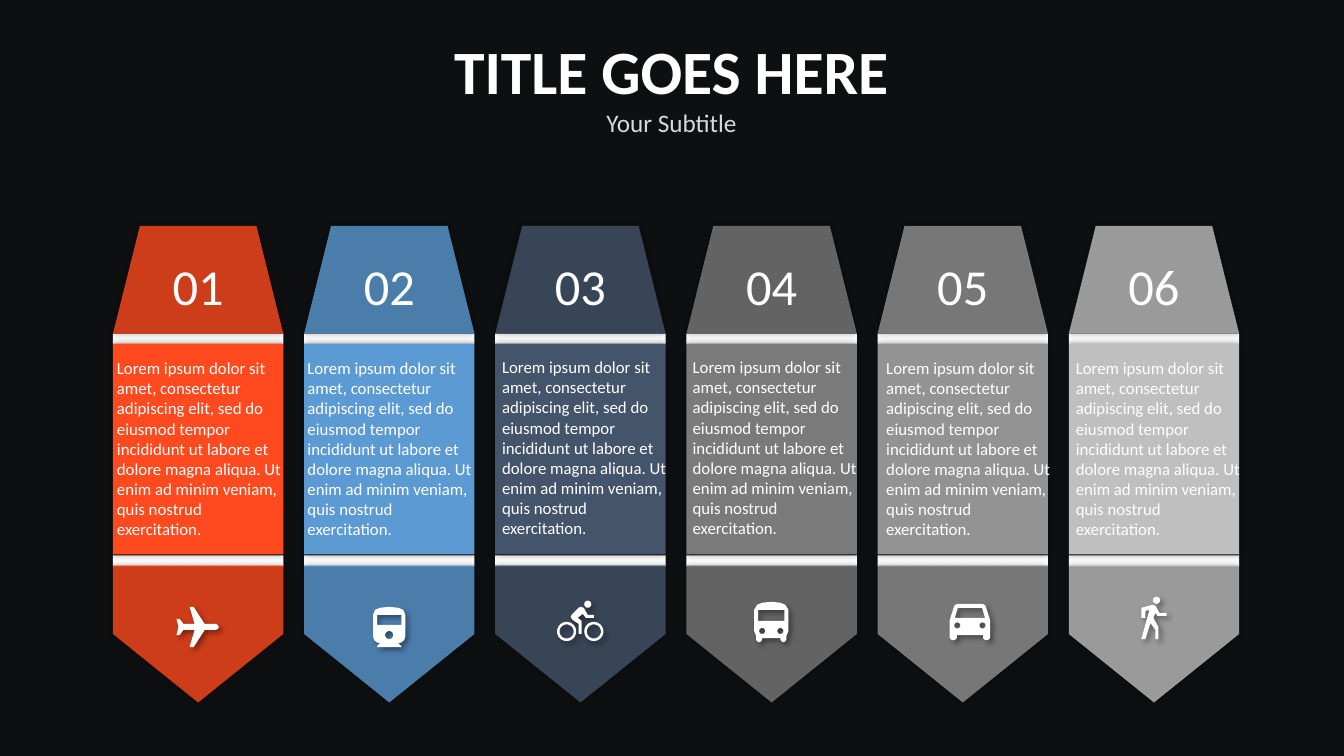
"""Build a slide with six numbered travel banners."""
from dataclasses import dataclass
from math import cos, pi, sin

from lxml import etree
from pptx import Presentation
from pptx import util as u
from pptx.dml.color import RGBColor
from pptx.enum import shapes, text
from pptx.oxml.ns import qn
from pptx.shapes.autoshape import Shape
from pptx.shapes.shapetree import GroupShapes, SlideShapes
from pptx.slide import Slide
from pptx.text.text import _Paragraph

Outline = list[tuple[float, float]]

COLORS = {
    "night": "0E0F11", "white": "FFFFFF", "subtitle": "D9D9D9", "shadow": "000000",
    "orange": "FE4A1E", "blue": "5C9AD3", "navy": "44546B",
    "dark gray": "7A7A7A", "gray": "939393", "light gray": "BFBFBF",
}
FONT = "Calibri"
LOREM = ("Lorem ipsum dolor sit amet, consectetur adipiscing elit, sed do eiusmod "
         "tempor incididunt ut labore et dolore magna aliqua. Ut enim ad minim veniam, "
         "quis nostrud exercitation.")
FIRST_LEFT, LAST_LEFT, BANNER_WIDTH = 1.12, 10.6, 1.69
STRIP_HEIGHT = 0.11
CAP_TOP, CAP_HEIGHT = 2.24, 1.07
PANEL_TOP, PANEL_HEIGHT = 3.41, 2.09
POINT_CENTER, POINT_LENGTH = 6.29, 1.36


@dataclass(frozen=True)
class Shadow:
    blur: float
    distance: float
    angle: int


@dataclass(frozen=True)
class Icon:
    center_x: float
    center_y: float
    outlines: list[Outline]


@dataclass(frozen=True)
class Banner:
    number: str
    color: str
    body_left: float
    body_top: float
    icon: Icon


GLOW = Shadow(5, 0, 0)
DROP = Shadow(4, 3, 45)


def circle(x: float, y: float, radius: float) -> Outline:
    """Return a circle as 32 points."""
    return [(x + radius * cos(k * pi / 16), y + radius * sin(k * pi / 16)) for k in range(32)]


def mirror_x(half: Outline) -> Outline:
    """Complete a right half with its left half."""
    return half + [(-x, y) for x, y in reversed(half)]


def mirror_y(half: Outline) -> Outline:
    """Complete an upper half with its lower half."""
    return half + [(x, -y) for x, y in reversed(half)]


PLANE = Icon(1.96, 6.22, [mirror_y([
    (21, 0), (20, -2), (18, -3), (7, -3), (-4, -20), (-8, -20), (-3, -3),
    (-14, -3), (-18, -8), (-21, -8), (-19, 0)])])
TRAIN = Icon(3.86, 6.22, [
    mirror_x([(0, -20), (9, -19), (14, -17), (16, -12), (16, 9), (15, 13), (12, 15.5),
              (9, 16), (12, 19), (12, 20)]),
    mirror_x([(12, -12), (12, -2)]), circle(0, 8, 4)])
BICYCLE = Icon(5.75, 6.16, [
    circle(8, -16.5, 3.5),
    *(circle(x, 10.5, radius) for x in (-13, 14) for radius in (9.5, 7)),
    [(6, -3), (14, -3), (14, -6), (8, -6), (4, -13), (1, -14), (-1, -13), (-8, -6),
     (-9, -4), (-7, -1), (-1, 3), (-1, 13), (2, 13), (2, 0), (-2, -3), (3, -7)]])
BUS = Icon(7.65, 6.17, [
    mirror_x([(0, -20), (9, -19), (14, -17), (17, -12), (17, 9), (15, 14), (15, 18),
              (13, 20), (11, 20), (9, 18), (9, 16)]),
    mirror_x([(13, -12), (13, -1)]), circle(-9, 9, 3), circle(9, 9, 3)])
CAR = Icon(9.62, 6.17, [
    mirror_x([(12, -18), (14.5, -17), (15.5, -16), (20, -2), (20, 16), (18, 18),
              (15, 18), (13, 16), (13, 13)]),
    mirror_x([(12, -14), (15, -4)]), circle(-12.5, 3.5, 3), circle(12.5, 3.5, 3)])
WALKER = Icon(11.44, 6.13, [
    circle(3, -17.5, 3.5),
    [(4, -2), (13, -2), (13, -5), (6, -5), (2, -12), (-1, -13), (-12, -10), (-12, 0),
     (-8, 0), (-8, -7), (-4, -8), (-12, 21), (-8, 21), (-3, 5), (2, 12), (2, 21),
     (5, 21), (5, 9), (0, 0), (2, -5)]])

BANNERS = [
    Banner("01", "orange", 1.09, 3.52, PLANE),
    Banner("02", "blue", 2.98, 3.52, TRAIN),
    Banner("03", "navy", 4.91, 3.51, BICYCLE),
    Banner("04", "dark gray", 6.8, 3.51, BUS),
    Banner("05", "gray", 8.72, 3.52, CAR),
    Banner("06", "light gray", 10.6, 3.52, WALKER),
]
PITCH = (LAST_LEFT - FIRST_LEFT) / (len(BANNERS) - 1)


def paint(part: Shape, color: str, opacity: int = 100, shadow: Shadow | None = None) -> None:
    """Fill a part without outline and set its shadow."""
    part.fill.solid()
    part.fill.fore_color.rgb = RGBColor.from_string(COLORS[color])
    part.line.fill.background()
    part.shadow.inherit = False
    properties = part._element.spPr
    if opacity < 100:
        tint = properties.find(qn("a:solidFill"))[0]
        etree.SubElement(tint, qn("a:alpha"), val=str(opacity * 1000))
    if shadow:
        outer = etree.SubElement(
            properties.find(qn("a:effectLst")), qn("a:outerShdw"),
            blurRad=str(u.Pt(shadow.blur)), dist=str(u.Pt(shadow.distance)),
            dir=str(shadow.angle * 60000), algn="ctr", rotWithShape="0")
        shade = etree.SubElement(outer, qn("a:srgbClr"), val=COLORS["shadow"])
        etree.SubElement(shade, qn("a:alpha"), val="40000")


def add_part(tree: SlideShapes | GroupShapes, kind: shapes.MSO_SHAPE, left: float,
             top: float, width: float, height: float) -> Shape:
    """Add a preset shape placed in inches."""
    return tree.add_shape(kind, u.Inches(left), u.Inches(top), u.Inches(width), u.Inches(height))


def write(paragraph: _Paragraph, words: str, size: int, color: str = "white",
          bold: bool = False) -> None:
    """Add one formatted run."""
    run = paragraph.add_run()
    run.text = words
    run.font.name, run.font.size, run.font.bold = FONT, u.Pt(size), bold
    run.font.color.rgb = RGBColor.from_string(COLORS[color])


def add_strip(tree: GroupShapes, left: float, top: float) -> None:
    """Add the white strip next to a panel."""
    paint(add_part(tree, shapes.MSO_SHAPE.RECTANGLE, left, top, BANNER_WIDTH, STRIP_HEIGHT), "white")


def add_cap(slide: Slide, banner: Banner, left: float) -> None:
    """Add the numbered top of a banner."""
    tree = slide.shapes.add_group_shape().shapes
    add_strip(tree, left, CAP_TOP + CAP_HEIGHT)
    cap = add_part(tree, shapes.MSO_SHAPE.TRAPEZOID, left, CAP_TOP, BANNER_WIDTH, CAP_HEIGHT)
    paint(cap, banner.color, 80, GLOW)
    cap.text_frame.vertical_anchor = text.MSO_ANCHOR.MIDDLE
    label = cap.text_frame.paragraphs[0]
    label.alignment = text.PP_ALIGN.CENTER
    write(label, banner.number, 36)


def add_point(slide: Slide, banner: Banner, left: float) -> None:
    """Add the pointed bottom of a banner."""
    tree = slide.shapes.add_group_shape().shapes
    add_strip(tree, left, 5.51)
    point = add_part(tree, shapes.MSO_SHAPE.PENTAGON, left + (BANNER_WIDTH - POINT_LENGTH) / 2,
                     POINT_CENTER - BANNER_WIDTH / 2, POINT_LENGTH, BANNER_WIDTH)
    point.rotation = 90
    paint(point, banner.color, 80, GLOW)


def add_title(slide: Slide) -> None:
    """Add the title and subtitle."""
    frame = slide.shapes.add_textbox(
        u.Inches(3.65), u.Inches(0.28), u.Inches(6.02), u.Inches(1.14)).text_frame
    frame.word_wrap = True
    frame.auto_size = text.MSO_AUTO_SIZE.SHAPE_TO_FIT_TEXT
    write(frame.paragraphs[0], "TITLE GOES HERE", 44, bold=True)
    write(frame.add_paragraph(), "Your Subtitle", 18, "subtitle")
    for paragraph in frame.paragraphs:
        paragraph.alignment = text.PP_ALIGN.CENTER


def add_panel(slide: Slide, banner: Banner, left: float) -> None:
    """Add the coloured middle of a banner."""
    paint(add_part(slide.shapes, shapes.MSO_SHAPE.RECTANGLE, left, PANEL_TOP,
                   BANNER_WIDTH, PANEL_HEIGHT), banner.color, shadow=GLOW)


def add_icon(slide: Slide, banner: Banner, left: float) -> None:
    """Draw an icon whose outlines are in hundredths of an inch."""
    icon = banner.icon
    contours = [[(u.Inches(icon.center_x + x / 100), u.Inches(icon.center_y + y / 100))
                 for x, y in outline] for outline in icon.outlines]
    builder = slide.shapes.build_freeform(*contours[0][0])
    for contour in contours:
        builder.move_to(*contour[0])
        builder.add_line_segments(contour[1:], close=True)
    paint(builder.convert_to_shape(), "white", shadow=DROP)


def add_body(slide: Slide, banner: Banner, left: float) -> None:
    """Add the body text of a banner."""
    frame = slide.shapes.add_textbox(u.Inches(banner.body_left), u.Inches(banner.body_top),
                                     u.Inches(1.8), u.Inches(1.88)).text_frame
    frame.word_wrap = True
    frame.auto_size = text.MSO_AUTO_SIZE.SHAPE_TO_FIT_TEXT
    frame.margin_left = frame.margin_right = u.Inches(0.07)
    frame.margin_top = frame.margin_bottom = u.Inches(0.03)
    write(frame.paragraphs[0], LOREM, 12)


def main() -> None:
    """Build and save the slide."""
    deck = Presentation()
    deck.slide_width, deck.slide_height = u.Inches(13.33), u.Inches(7.5)
    slide = deck.slides.add_slide(deck.slide_layouts[6])
    slide.background.fill.solid()
    slide.background.fill.fore_color.rgb = RGBColor.from_string(COLORS["night"])
    add_title(slide)
    for add_layer in (add_cap, add_point, add_panel, add_icon, add_body):
        for column, banner in enumerate(BANNERS):
            add_layer(slide, banner, FIRST_LEFT + column * PITCH)
    deck.save("out.pptx")


if __name__ == "__main__":
    main()
